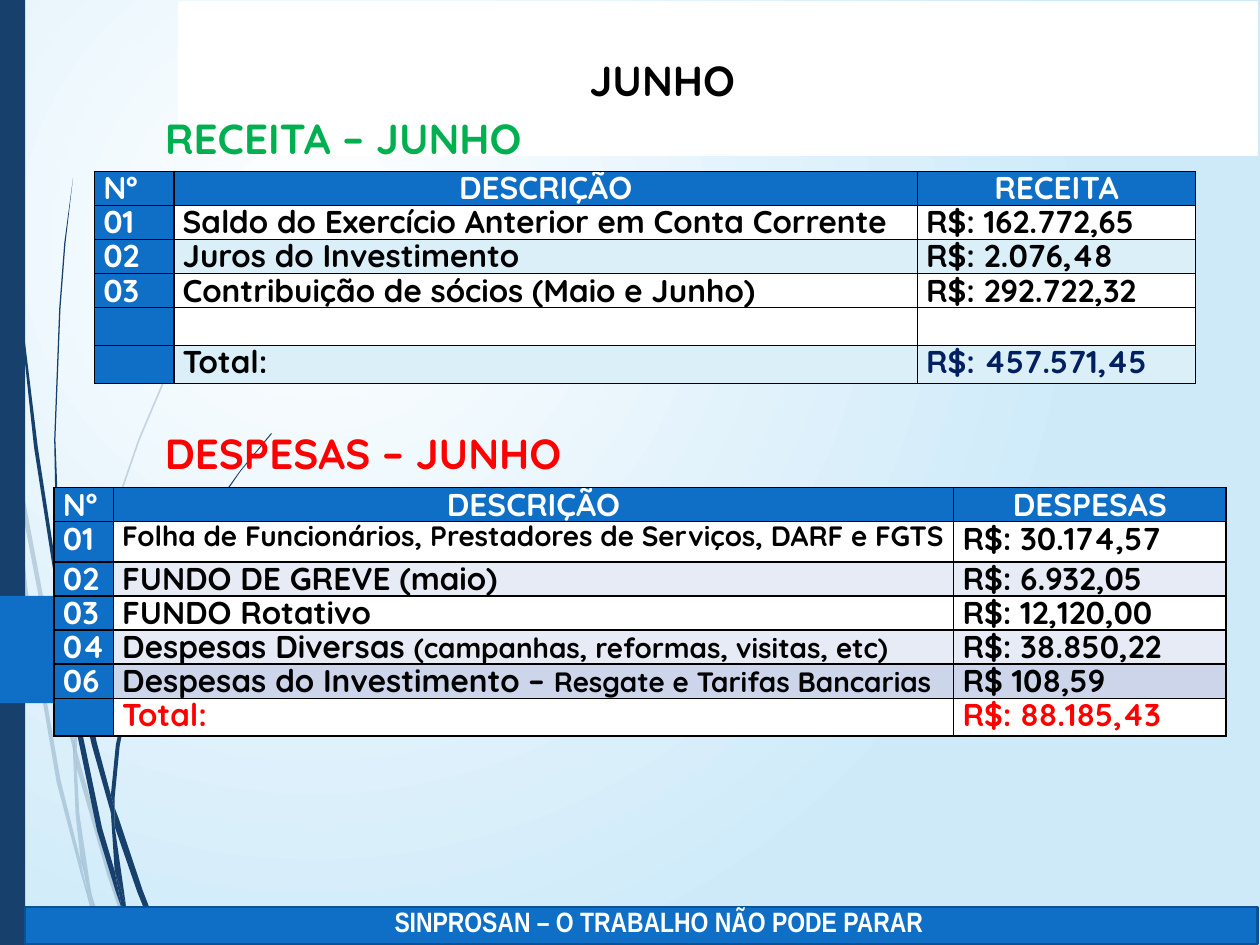
from dataclasses import dataclass
from typing import Optional

from lxml.etree import SubElement
from pptx import Presentation
from pptx.dml.color import RGBColor
from pptx.enum.shapes import MSO_SHAPE as Shape
from pptx.enum.text import MSO_ANCHOR as Anchor, PP_ALIGN as Align
from pptx.oxml import parse_xml
from pptx.oxml.ns import nsdecls, qn
from pptx.util import Inches, Pt


@dataclass(frozen=True)
class Theme:
    font: str = "Quicksand"
    footer_font: str = "Arial Narrow"
    title_size: int = 24
    body_size: int = 18
    small_size: int = 16
    white: str = "FFFFFF"
    black: str = "000000"
    sky: str = "CEEAF9"
    navy: str = "17406D"
    blue: str = "0F6FC6"
    blue_edge: str = "0B5292"
    pale_blue: str = "DBEFF9"
    pale_gray: str = "E7EBF5"
    lilac: str = "CCD5EA"
    green: str = "00B050"
    red: str = "FF0000"
    total_blue: str = "002060"


THEME = Theme()


@dataclass(frozen=True)
class Span:
    text: str
    color: str = THEME.black
    size: int = THEME.body_size
    font: str = THEME.font


@dataclass(frozen=True)
class Entry:
    """One table line: number, description spans, amount and band colour."""
    number: str
    description: tuple = ()
    amount: Optional[Span] = None
    band: str = THEME.white
    height: float = 0.27


@dataclass(frozen=True)
class Ledger:
    left: float
    top: float
    widths: tuple
    amount_title: str
    entries: tuple


# Outlines of the grass blades at the left edge, in inches.
PALE_BLADES = (
    ((0.08, 3.5), (0.06, 3.22), (0, 2.82), (0, 2.99), (0.07, 3.44)),
    ((0.4, 5.22), (0.59, 5.99), (0.59, 5.86), (0.43, 5.2), (0.1, 3.45), (0.12, 3.76)),
    ((0.64, 6.07), (0.61, 5.96), (0.61, 6.1), (0.85, 6.94), (1.04, 7.5), (1.08, 7.5), (0.88, 6.92)),
    ((0.83, 7.5), (0.86, 7.5), (0.73, 7.11)),
    ((0.64, 6.83), (0.48, 6.19), (0.22, 4.69), (0.12, 3.76), (0.08, 3.5), (0.19, 4.7), (0.45, 6.21),
     (0.64, 6.93), (0.7, 7.14), (0.69, 7.07)),
    ((0.58, 5.99), (0.6, 6.46), (0.64, 6.83), (0.67, 6.92), (0.73, 7.11), (0.72, 7.06), (0.63, 6.46),
     (0.61, 6.1), (0.61, 6.08)),
    ((0.61, 5.84), (0.65, 5.22), (0.76, 4.62), (0.92, 4.04), (1.11, 3.49), (1.34, 2.95), (1.59, 2.45),
     (1.87, 1.98), (2.01, 1.75), (2.17, 1.54), (2.17, 1.53), (2.01, 1.75), (1.86, 1.97), (1.58, 2.44),
     (1.33, 2.94), (1.1, 3.48), (0.91, 4.03), (0.75, 4.61), (0.64, 5.22), (0.59, 5.84), (0.61, 5.96)),
    ((0.7, 7.14), (0.79, 7.5), (0.82, 7.5)),
    ((0.61, 6.08), (0.61, 6.1), (0.61, 5.96), (0.59, 5.86), (0.58, 5.99)),
    ((0.67, 6.92), (0.65, 6.83), (0.69, 7.07), (0.7, 7.14), (0.82, 7.5), (0.83, 7.5), (0.73, 7.11)),
)
DARK_BLADES = (
    ((0.05, 1.1), (0.14, 2.33), (0.27, 3.55), (0.46, 4.77), (0.47, 4.81), (0.45, 4.53), (0.3, 3.55),
     (0.15, 2.32), (0.06, 1.09), (0.04, 0.48), (0.03, 0), (0.02, 0), (0.03, 0.48)),
    ((0.73, 5.92), (0.88, 6.45), (0.88, 6.31), (0.77, 5.9), (0.5, 4.72), (0.53, 5.05)),
    ((0.94, 6.49), (0.91, 6.41), (0.91, 6.56), (1.09, 7.08), (1.26, 7.5), (1.3, 7.5), (1.13, 7.06)),
    ((0.91, 6.91), (0.81, 6.57), (0.6, 5.56), (0.53, 5.05), (0.47, 4.77), (0.56, 5.57), (0.77, 6.59),
     (0.92, 7.08), (0.97, 7.22), (0.96, 7.17)),
    ((0.5, 4.72), (0.48, 4.53), (0.44, 3.49), (0.48, 2.45), (0.52, 1.93), (0.58, 1.41), (0.51, 1.93),
     (0.47, 2.45), (0.43, 3.49), (0.45, 4.49), (0.49, 4.72)),
    ((1.1, 7.5), (1.13, 7.5), (1, 7.19)),
    ((0.47, 4.77), (0.53, 5.05), (0.5, 4.72), (0.49, 4.72), (0.45, 4.49), (0.45, 4.53)),
    ((0.91, 6.33), (0.95, 5.92), (1.03, 5.52), (1.15, 5.13), (1.31, 4.76), (1.69, 4.06), (1.91, 3.74),
     (2.16, 3.44), (2.15, 3.44), (1.91, 3.73), (1.68, 4.05), (1.29, 4.74), (1.13, 5.12), (1.01, 5.51),
     (0.92, 5.91), (0.88, 6.31), (0.91, 6.41)),
    ((0.97, 7.22), (1.05, 7.5), (1.08, 7.5)),
    ((0.88, 6.45), (0.91, 6.91), (0.96, 7.06), (1, 7.19), (0.91, 6.56), (0.9, 6.51)),
    ((0.88, 6.45), (0.91, 6.56), (0.91, 6.41), (0.88, 6.31)),
    ((0.96, 7.06), (0.91, 6.91), (0.97, 7.22), (1.08, 7.5), (1.1, 7.5), (1, 7.19)),
)
PAGE_MARKER = ((-0.03, 4.73), (1.07, 4.73), (1.1, 4.74), (1.49, 5.13), (1.5, 5.16), (1.49, 5.18),
               (1.1, 5.57), (1.07, 5.58), (-0.03, 5.58))

INCOME = Ledger(0.75, 1.36, (0.63, 5.9, 2.21), "RECEITA", (
    Entry("01", (Span("Saldo do Exercício Anterior em Conta Corrente"),), Span("R$: 162.772,65")),
    Entry("02", (Span("Juros do Investimento"),), Span("R$: 2.076,48"), THEME.pale_blue),
    Entry("03", (Span("Contribuição de sócios (Maio e Junho)"),), Span("R$: 292.722,32")),
    Entry(""),
    Entry("", (Span("Total:"),), Span("R$: 457.571,45", THEME.total_blue), THEME.pale_blue),
))
EXPENSES = Ledger(0.43, 3.87, (0.47, 6.67, 2.16), "DESPESAS", (
    Entry("01", (Span("Folha de Funcionários, Prestadores de Serviços, DARF e FGTS", size=THEME.small_size),),
          Span("R$: 30.174,57"), height=0.32),
    Entry("02", (Span("FUNDO DE GREVE (maio)"),), Span("R$: 6.932,05"), THEME.pale_gray),
    Entry("03", (Span("FUNDO Rotativo"),), Span("R$: 12,120,00")),
    Entry("04", (Span("Despesas Diversas "), Span("(campanhas, reformas, visitas, etc)", size=THEME.small_size)),
          Span("R$: 38.850,22"), THEME.pale_gray),
    Entry("06", (Span("Despesas do Investimento – "), Span("Resgate e Tarifas Bancarias", size=THEME.small_size)),
          Span("R$ 108,59"), THEME.lilac),
    Entry("", (Span("Total:", THEME.red),), Span("R$: 88.185,43", THEME.red)),
))


def paint(target, color: str) -> None:
    target.fill.solid()
    target.fill.fore_color.rgb = RGBColor.from_string(color)


def paint_background(page) -> None:
    stops = "".join(f'<a:gs pos="{pos}"><a:srgbClr val="{color}"/></a:gs>'
                    for pos, color in ((0, THEME.white), (100000, THEME.sky)))
    background = parse_xml(
        f'<p:bg {nsdecls("p", "a")}><p:bgPr><a:gradFill rotWithShape="1"><a:gsLst>{stops}</a:gsLst>'
        '<a:path path="circle"><a:fillToRect l="50000" t="50000" r="100000" b="100000"/></a:path>'
        '</a:gradFill><a:effectLst/></p:bgPr></p:bg>')
    page.element.cSld.insert(0, background)


def add_outline(shapes, points: tuple, color: str, opacity: int = 100) -> None:
    start, *rest = [(Inches(x), Inches(y)) for x, y in points]
    builder = shapes.build_freeform(*start)
    builder.add_line_segments(rest, close=True)
    outline = builder.convert_to_shape()
    outline.shadow.inherit = False
    paint(outline, color)
    outline.line.fill.background()
    if opacity < 100:
        tint = outline.element.spPr.find(f"{qn('a:solidFill')}/{qn('a:srgbClr')}")
        SubElement(tint, qn("a:alpha")).set("val", str(opacity * 1000))


def add_blades(page, blades: tuple, opacity: int) -> None:
    group = page.shapes.add_group_shape()
    for blade in blades:
        add_outline(group.shapes, blade, THEME.navy, opacity)


def add_bar(page, place: tuple, color: str, edge: Optional[str] = None) -> None:
    bar = page.shapes.add_shape(Shape.RECTANGLE, *map(Inches, place))
    bar.shadow.inherit = False
    paint(bar, color)
    if edge:
        bar.line.color.rgb = RGBColor.from_string(edge)
        bar.line.width = Pt(1.25)
    else:
        bar.line.fill.background()


def write(para, spans: tuple, align: Align = Align.LEFT) -> None:
    para.alignment = align
    for span in spans:
        run = para.add_run()
        run.text = span.text
        run.font.name, run.font.size, run.font.bold = span.font, Pt(span.size), True
        run.font.color.rgb = RGBColor.from_string(span.color)


def add_label(page, place: tuple, span: Span, align: Align = Align.LEFT, anchor: Anchor = Anchor.BOTTOM) -> None:
    box = page.shapes.add_textbox(*map(Inches, place))
    box.text_frame.word_wrap = True
    box.text_frame.vertical_anchor = anchor
    write(box.text_frame.paragraphs[0], (span,), align)


def fill_cell(cell, spans: tuple, color: str, align: Align = Align.LEFT) -> None:
    cell.margin_left = cell.margin_right = Inches(0.07)
    cell.margin_top = cell.margin_bottom = 0
    para = cell.text_frame.paragraphs[0]
    para.line_spacing = 0.9
    write(para, spans, align)
    properties = cell._tc.get_or_add_tcPr()
    for side in ("lnL", "lnR", "lnT", "lnB"):
        border = SubElement(properties, qn(f"a:{side}"), w=str(Pt(1)))
        SubElement(SubElement(border, qn("a:solidFill")), qn("a:srgbClr"), val=THEME.black)
    paint(cell, color)


def add_ledger(page, ledger: Ledger) -> None:
    heights = [0.27] + [entry.height for entry in ledger.entries]
    table = page.shapes.add_table(
        len(heights), len(ledger.widths), Inches(ledger.left), Inches(ledger.top),
        Inches(sum(ledger.widths)), Inches(sum(heights))).table
    for column, width in zip(table.columns, ledger.widths):
        column.width = Inches(width)
    for row, height in zip(table.rows, heights):
        row.height = Inches(height)
    for index, title in enumerate(("Nº", "DESCRIÇÃO", ledger.amount_title)):
        align = Align.CENTER if index else Align.LEFT
        fill_cell(table.cell(0, index), (Span(title, THEME.white),), THEME.blue, align)
    for index, entry in enumerate(ledger.entries, start=1):
        number = (Span(entry.number, THEME.white),) if entry.number else ()
        amount = (entry.amount,) if entry.amount else ()
        fill_cell(table.cell(index, 0), number, THEME.blue)
        fill_cell(table.cell(index, 1), entry.description, entry.band)
        fill_cell(table.cell(index, 2), amount, entry.band)


def main() -> None:
    deck = Presentation()
    deck.slide_width, deck.slide_height = Inches(10), Inches(7.5)
    page = deck.slides.add_slide(deck.slide_layouts[6])
    paint_background(page)
    add_blades(page, PALE_BLADES, 20)
    add_blades(page, DARK_BLADES, 100)
    add_bar(page, (0, 0, 0.2, 7.5), THEME.navy)
    add_outline(page.shapes, PAGE_MARKER, THEME.blue)
    add_bar(page, (1.42, 0.02, 8.56, 1.21), THEME.white, THEME.white)
    add_bar(page, (0.2, 7.2, 9.78, 0.29), THEME.blue, THEME.blue_edge)
    add_label(page, (2.52, 7.13, 5.47, 0.37),
              Span("SINPROSAN – O TRABALHO NÃO PODE PARAR ", THEME.white, THEME.small_size, THEME.footer_font),
              Align.CENTER, Anchor.TOP)
    add_label(page, (1.21, 0.7, 6.71, 0.64), Span("RECEITA – JUNHO", THEME.green, THEME.title_size))
    add_label(page, (1.21, 3.2, 6.71, 0.64), Span("DESPESAS – JUNHO", THEME.red, THEME.title_size))
    add_label(page, (1.9, 0.24, 6.71, 0.64), Span("JUNHO", size=THEME.title_size), Align.CENTER)
    add_ledger(page, INCOME)
    add_ledger(page, EXPENSES)
    deck.save("out.pptx")


if __name__ == "__main__":
    main()
